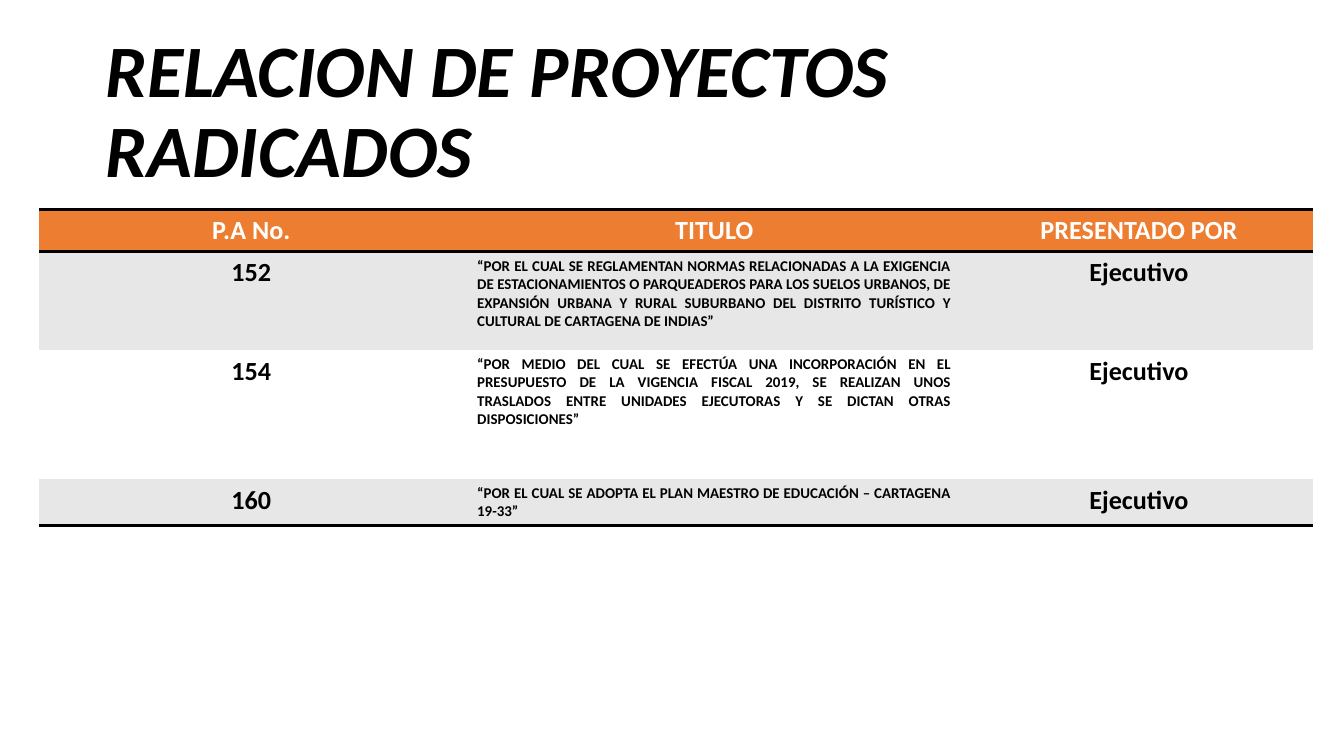
from dataclasses import dataclass

from lxml import etree
from pptx import Presentation
from pptx.dml.color import RGBColor
from pptx.enum.text import MSO_ANCHOR, PP_ALIGN
from pptx.oxml.ns import qn
from pptx.util import Inches, Pt

MIDDLE = MSO_ANCHOR.MIDDLE
CENTER = PP_ALIGN.CENTER
JUSTIFY = PP_ALIGN.JUSTIFY
NO_GRID_STYLE = "{2D5ABB26-0587-4C30-8999-92F81FD0307C}"


@dataclass(frozen=True)
class Theme:
    font: str = "Calibri"
    ink: str = "000000"
    paper: str = "FFFFFF"
    accent: str = "ED7D31"
    band: str = "E7E7E7"
    title_size: float = 39.6
    label_size: float = 14
    body_size: float = 8
    rule_width: float = 2


THEME = Theme()
TITLE = "RELACION DE PROYECTOS RADICADOS"
HEADERS = ["P.A No.", "TITULO", "PRESENTADO POR"]
PROJECTS = [
    ("152", "“POR EL CUAL SE REGLAMENTAN NORMAS RELACIONADAS A LA EXIGENCIA DE "
            "ESTACIONAMIENTOS O PARQUEADEROS PARA LOS SUELOS URBANOS, DE EXPANSIÓN "
            "URBANA Y RURAL SUBURBANO DEL DISTRITO TURÍSTICO Y CULTURAL DE "
            "CARTAGENA DE INDIAS”", "Ejecutivo"),
    ("154", "“POR MEDIO DEL CUAL SE EFECTÚA UNA INCORPORACIÓN EN EL PRESUPUESTO DE "
            "LA VIGENCIA FISCAL 2019, SE REALIZAN UNOS TRASLADOS ENTRE UNIDADES "
            "EJECUTORAS Y SE DICTAN OTRAS DISPOSICIONES”", "Ejecutivo"),
    ("160", "“POR EL CUAL SE ADOPTA EL PLAN MAESTRO DE EDUCACIÓN – CARTAGENA "
            "19-33”", "Ejecutivo"),
]
COLUMN_WIDTHS = [3.16, 3.73, 2.59]
ROW_HEIGHTS = [0.3, 0.73, 0.96, 0.34]


def format_text(p, size, color, italic=False):
    for r in p.runs:
        font = r.font
        font.name = THEME.font
        font.size = Pt(size)
        font.bold = True
        font.italic = italic
        font.color.rgb = RGBColor.from_string(color)


def add_title(slide):
    sp = slide.shapes.add_textbox(Inches(0.69), Inches(0.3), Inches(8.62), Inches(1.09))
    tf = sp.text_frame
    tf.word_wrap = True
    tf.vertical_anchor = MIDDLE
    tf.text = TITLE
    p = tf.paragraphs[0]
    p.line_spacing = 0.9
    format_text(p, THEME.title_size, THEME.ink, italic=True)


def add_rules(cell, sides):
    tc_pr = cell._tc.get_or_add_tcPr()
    for i, side in enumerate(sides):
        ln = etree.Element(qn(f"a:ln{side}"), w=str(Pt(THEME.rule_width)))
        fill = etree.SubElement(ln, qn("a:solidFill"))
        etree.SubElement(fill, qn("a:srgbClr"), val=THEME.ink)
        tc_pr.insert(i, ln)


def fill_cell(cell, text, fill, color, size, align):
    cell.margin_left = cell.margin_right = Inches(0.1)
    cell.margin_top = cell.margin_bottom = Inches(0.04)
    cell.fill.solid()
    cell.fill.fore_color.rgb = RGBColor.from_string(fill)
    cell.text_frame.text = text
    p = cell.text_frame.paragraphs[0]
    p.alignment = align
    format_text(p, size, color)


def add_project_table(slide):
    rows = [HEADERS, *PROJECTS]
    frame = slide.shapes.add_table(
        len(rows), len(HEADERS), Inches(0.29), Inches(1.56),
        Inches(sum(COLUMN_WIDTHS)), Inches(sum(ROW_HEIGHTS)))
    table = frame.table
    table.first_row = table.horz_banding = False
    table._tbl.tblPr.find(qn("a:tableStyleId")).text = NO_GRID_STYLE
    for column, width in zip(table.columns, COLUMN_WIDTHS):
        column.width = Inches(width)
    for row, height in zip(table.rows, ROW_HEIGHTS):
        row.height = Inches(height)

    for i, values in enumerate(rows):
        header = i == 0
        fill = THEME.accent if header else THEME.band if i % 2 else THEME.paper
        color = THEME.paper if header else THEME.ink
        sides = "TB" if header else "B" if i == len(rows) - 1 else ""
        for j, text in enumerate(values):
            is_body = j == 1 and not header
            size = THEME.body_size if is_body else THEME.label_size
            cell = table.cell(i, j)
            fill_cell(cell, text, fill, color, size, JUSTIFY if is_body else CENTER)
            add_rules(cell, sides)


def main():
    prs = Presentation()
    prs.slide_width = Inches(10)
    prs.slide_height = prs.slide_width * 9 // 16
    slide = prs.slides.add_slide(prs.slide_layouts[6])
    add_title(slide)
    add_project_table(slide)
    prs.save("out.pptx")


if __name__ == "__main__":
    main()
